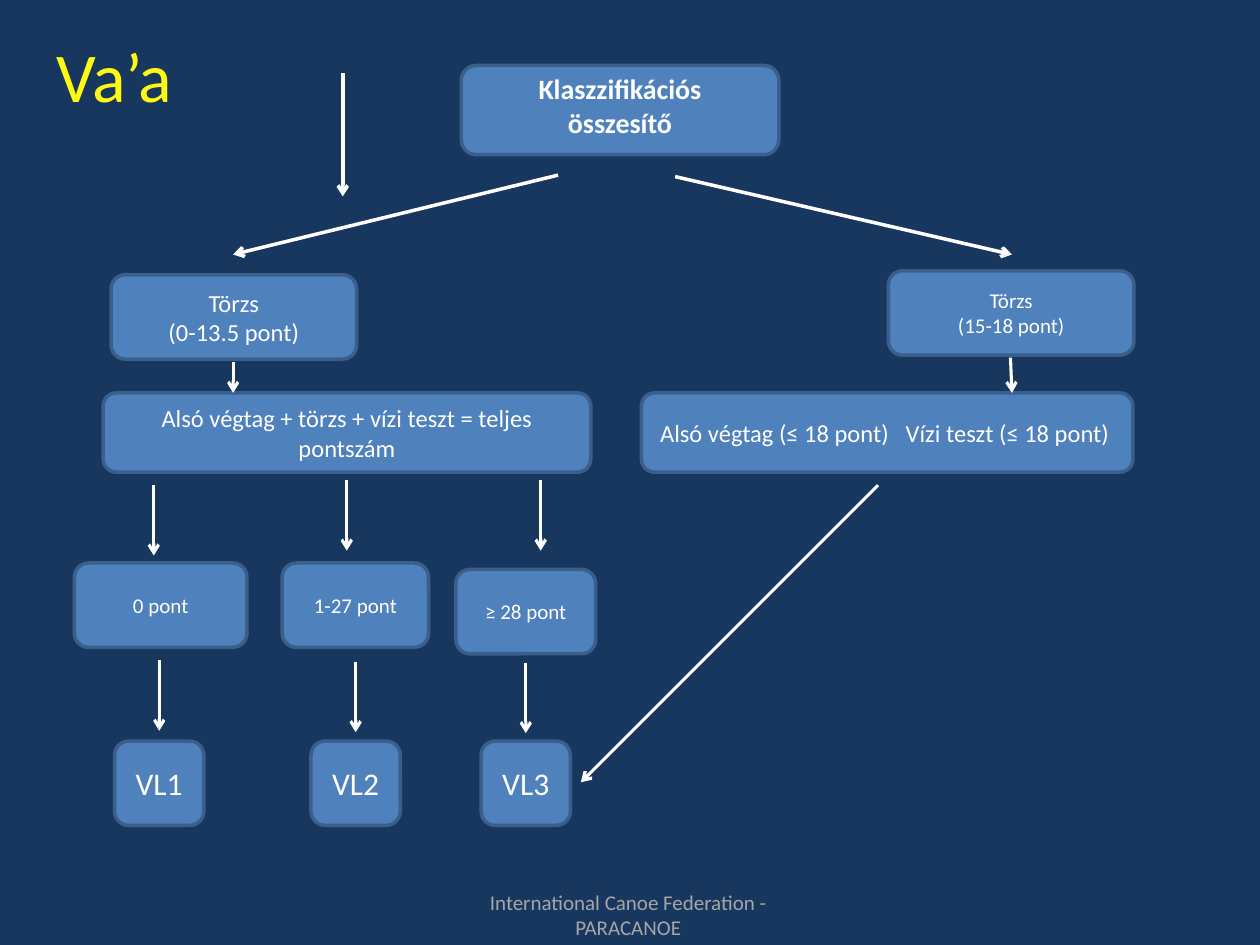
from pptx import Presentation
from pptx.dml.color import RGBColor
from pptx.enum.shapes import MSO_CONNECTOR as Line, MSO_SHAPE as Shape
from pptx.enum.text import MSO_ANCHOR as Anchor, PP_ALIGN as Align
from pptx.oxml.ns import qn
from pptx.util import Cm, Pt
from lxml.etree import SubElement

NAVY, BLUE, EDGE = "17375E", "4F81BD", "3A5F8C"
WHITE, YELLOW, GREY = "FFFFFF", "FEF913", "A6A6A6"

# Lengths in cm: left, top, width, height
TITLE = ("Va’a", (0.89, 0.53, 9.6, 1.96))
FOOTER = ("International Canoe Federation - PARACANOE", (8.64, 17.93, 8.05, 1.02))
HEAD = ("Klaszzifikációs összesítő", (9.3, 1.32, 6.4, 1.8))
LIMITS = ("Alsó végtag (≤ 18 pont)\tVízi teszt (≤ 18 pont)", (12.93, 7.92, 9.91, 1.6))
STEPS = [
    ("Törzs\n(0-13.5 pont)", (2.24, 5.54, 4.95, 1.7), 14),
    ("Törzs\n(15-18 pont)", (17.91, 5.46, 4.95, 1.7), 12),
    ("Alsó végtag + törzs + vízi teszt = teljes pontszám", (2.08, 7.92, 9.83, 1.6), 14),
]
# Score text, its left, top and width, class name, its left, top of the arrow between
CLASSES = [
    ("0 pont", 1.5, 11.35, 3.48, "VL1", 2.31, 13.31),
    ("1-27 pont", 5.69, 11.35, 2.95, "VL2", 6.27, 13.34),
    ("≥ 28 pont", 9.19, 11.48, 2.82, "VL3", 9.7, 13.36),
]
CLASS_TOP, CLASS_W, BOX_H, DROP = 14.94, 1.8, 1.7, 1.42
DROPS = [(3.1, 9.78), (6.99, 9.68), (10.9, 9.68)]
# From x, y to x, y, then width in points
ARROWS = [
    (11.25, 3.53, 4.7, 5.13, 2),
    (13.61, 3.56, 20.4, 5.13, 2),
    (6.91, 1.47, 6.91, 3.96, 2),
    (4.7, 7.29, 4.7, 7.92, 1.75),
    (20.37, 7.21, 20.4, 7.92, 1.75),
    (17.7, 9.78, 11.71, 15.77, 1.75),
]


def rgb(code):
    return RGBColor.from_string(code)


def write(shape, text, size=14, color=WHITE, bold=False, align=Align.CENTER,
          anchor=Anchor.MIDDLE, side=0.25, top=0.13, tab=None):
    frame = shape.text_frame
    frame.word_wrap = True
    frame.vertical_anchor = anchor
    frame.margin_left = frame.margin_right = Cm(side)
    frame.margin_top, frame.margin_bottom = Cm(top), Cm(0.13)
    frame.text = text
    for para in frame.paragraphs:
        para.alignment = align
        if tab:
            stops = SubElement(para._p.get_or_add_pPr(), qn("a:tabLst"))
            SubElement(stops, qn("a:tab"), pos=str(Cm(tab)), algn="l")
        for run in para.runs:
            font = run.font
            font.name, font.size, font.bold = "Calibri", Pt(size), bold
            font.color.rgb = rgb(color)


def box(text, place, **look):
    shape = slide.shapes.add_shape(Shape.FLOWCHART_ALTERNATE_PROCESS, *map(Cm, place))
    shape.shadow.inherit = False
    shape.fill.solid()
    shape.fill.fore_color.rgb = rgb(BLUE)
    shape.line.color.rgb = rgb(EDGE)
    shape.line.width = Pt(2)
    write(shape, text, **look)


def arrow(x1, y1, x2, y2, width=1.75):
    link = slide.shapes.add_connector(Line.STRAIGHT, *map(Cm, (x1, y1, x2, y2)))
    link.line.color.rgb = rgb(WHITE)
    link.line.width = Pt(width)
    SubElement(link.line._get_or_add_ln(), qn("a:tailEnd"), type="arrow")
    SubElement(link._element.spPr, qn("a:effectLst"))


deck = Presentation()
deck.slide_width, deck.slide_height = Cm(25.4), Cm(19.05)
slide = deck.slides.add_slide(deck.slide_layouts[5])
slide.background.fill.solid()
slide.background.fill.fore_color.rgb = rgb(NAVY)

text, place = TITLE
title = slide.shapes.title
title.left, title.top, title.width, title.height = map(Cm, place)
write(title, text, size=40, color=YELLOW, align=Align.LEFT, anchor=Anchor.TOP)

text, place = FOOTER
write(slide.shapes.add_textbox(*map(Cm, place)), text, size=12, color=GREY)

box(*HEAD, size=16, bold=True, anchor=Anchor.TOP, side=0.66, top=0.04)
box(*LIMITS, align=Align.LEFT, side=0.3, tab=4.95)
for text, place, size in STEPS:
    box(text, place, size=size)

for score, left, top, width, name, x, start in CLASSES:
    box(score, (left, top, width, BOX_H), size=12)
    box(name, (x, CLASS_TOP, CLASS_W, BOX_H), size=18, side=0.1)
    mid = x + CLASS_W / 2
    arrow(mid, start, mid, start + DROP)

for x, y in DROPS:
    arrow(x, y, x, y + DROP)
for ends in ARROWS:
    arrow(*ends)

deck.save("out.pptx")
